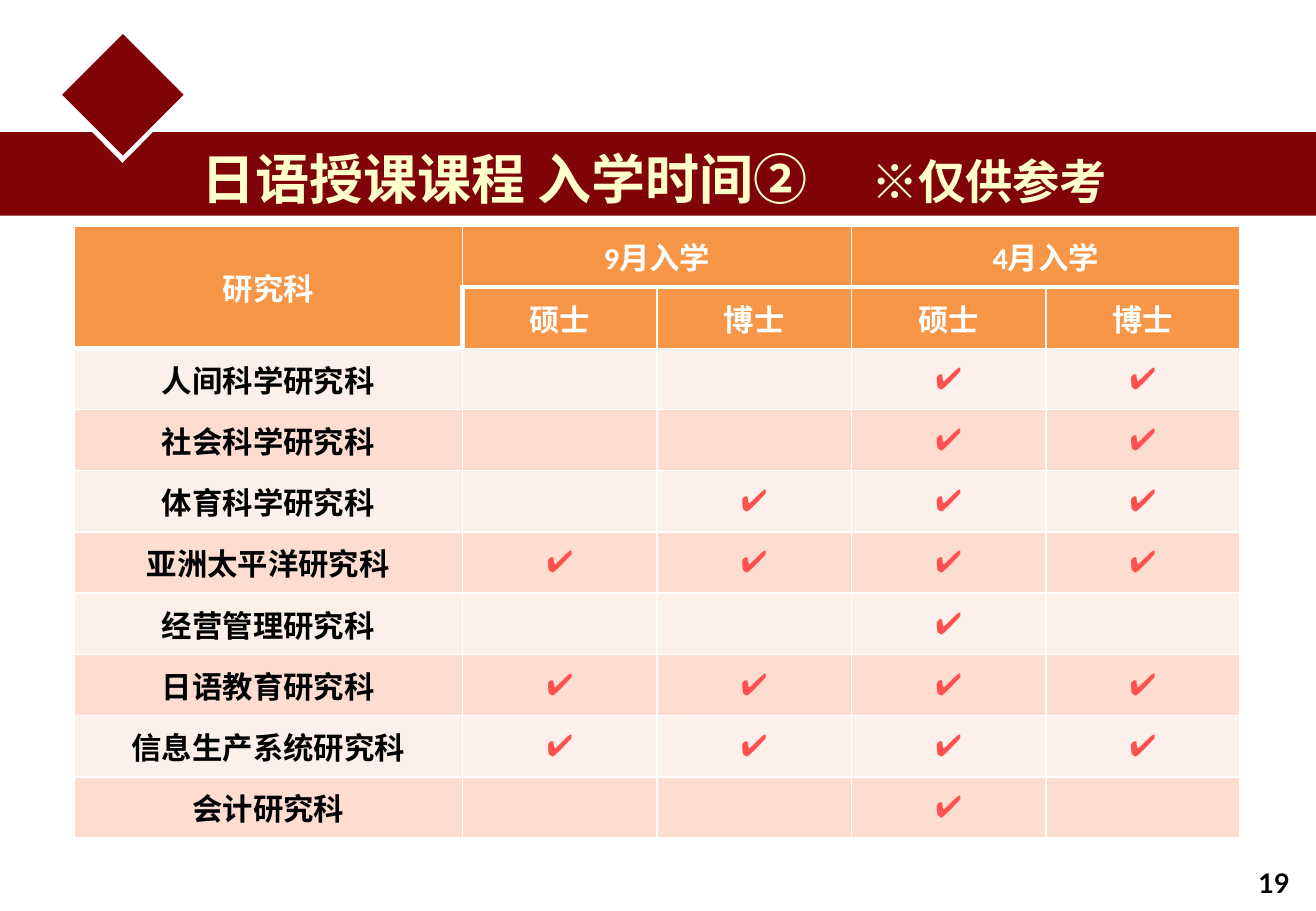
"""Build the slide of admission terms for the graduate schools."""
from dataclasses import dataclass

from lxml.etree import SubElement
from pptx import Presentation
from pptx.dml.color import RGBColor as RGB
from pptx.enum.shapes import MSO_SHAPE as SHAPE
from pptx.enum.text import MSO_ANCHOR as ANCHOR, PP_ALIGN as ALIGN
from pptx.oxml.ns import qn
from pptx.util import Emu, Pt

EMU_PER_PX = 3657.6
SCHOOLS = [
    ("人间科学研究科", "0011"),
    ("社会科学研究科", "0011"),
    ("体育科学研究科", "0111"),
    ("亚洲太平洋研究科", "1111"),
    ("经营管理研究科", "0010"),
    ("日语教育研究科", "1111"),
    ("信息生产系统研究科", "1111"),
    ("会计研究科", "0010"),
]


@dataclass(frozen=True)
class Theme:
    maroon: str = "800307"
    white: str = "FFFFFF"
    cream: str = "FFFFCC"
    black: str = "000000"
    header: str = "F79646"
    check: str = "FF5050"
    bands: tuple = ("FDEFE9", "FCDDCF")
    cjk: str = "Noto Sans CJK SC"
    body: str = "Roboto"
    digit: str = "Calibri"
    number: str = "Lato"
    title_size: int = 32
    note_size: int = 28
    table_size: int = 18
    number_size: int = 16


T = Theme()


def px(n):
    return Emu(round(n * EMU_PER_PX))


def style(p, name, size, color):
    p.font.name = name
    p.font.size = Pt(size)
    p.font.bold = True
    p.font.color.rgb = RGB.from_string(color)
    props = p._p.pPr.find(qn("a:defRPr"))
    SubElement(props, qn("a:ea")).set("typeface", T.cjk)


def add_runs(p, *texts):
    runs = [p.add_run() for _ in texts]
    for r, text in zip(runs, texts):
        r.text = text
    return runs


def add_block(shapes, kind, box, color):
    sp = shapes.add_shape(kind, *map(px, box))
    sp.shadow.inherit = False
    sp.fill.solid()
    sp.fill.fore_color.rgb = RGB.from_string(color)
    sp.line.fill.background()
    return sp


def add_text(s, box, wrap):
    tf = s.shapes.add_textbox(*map(px, box)).text_frame
    tf.word_wrap = wrap
    return tf.paragraphs[0]


def add_title(s):
    p = add_text(s, (390, 288, 2145, 160), True)
    tabs = SubElement(p._p.get_or_add_pPr(), qn("a:tabLst"))
    SubElement(tabs, qn("a:tab"), pos=str(px(1378)), algn="l")
    style(p, T.cjk, T.title_size, T.cream)
    note = add_runs(p, "日语授课课程 入学时间②\t", "※仅供参考")[1]
    note.font.size = Pt(T.note_size)


def border_widths(row, col):
    heavy_top = (row == 1 and col > 0) or (row, col) == (2, 0)
    heavy_bottom = row == 0 or (row, col) == (1, 0)
    return {
        "lnL": 3 if (row, col) == (1, 1) else 1,
        "lnR": 3 if (row, col) == (1, 0) else 1,
        "lnT": 3 if heavy_top else 1,
        "lnB": 3 if heavy_bottom else 1,
    }


def paint_cell(cell, row, col):
    tc_pr = cell._tc.get_or_add_tcPr()
    for side, width in border_widths(row, col).items():
        ln = SubElement(tc_pr, qn(f"a:{side}"), w=str(Pt(width)))
        fill = SubElement(ln, qn("a:solidFill"))
        SubElement(fill, qn("a:srgbClr"), val=T.white)
    cell.fill.solid()
    color = T.header if row < 2 else T.bands[row % 2]
    cell.fill.fore_color.rgb = RGB.from_string(color)
    cell.vertical_anchor = ANCHOR.MIDDLE
    cell.margin_left = cell.margin_right = px(28)


def fill_cell(cell, color, *texts):
    p = cell.text_frame.paragraphs[0]
    p.alignment = ALIGN.CENTER
    style(p, T.body, T.table_size, color)
    return add_runs(p, *texts)


def add_terms_table(s):
    widths = [800] + [400] * 4
    rows = len(SCHOOLS) + 2
    frame = s.shapes.add_table(rows, len(widths), px(152), px(465), px(sum(widths)), px(126 * rows))
    table = frame.table
    for column, width in zip(table.columns, widths):
        column.width = px(width)
    for row in range(rows):
        table.rows[row].height = px(126)
        for col in range(len(widths)):
            paint_cell(table.cell(row, col), row, col)

    table.cell(0, 0).merge(table.cell(1, 0))
    fill_cell(table.cell(0, 0), T.white, "研究科")
    for col, month in ((1, "9"), (3, "4")):
        table.cell(0, col).merge(table.cell(0, col + 1))
        digit = fill_cell(table.cell(0, col), T.white, month, "月入学")[0]
        digit.font.name = T.digit
        fill_cell(table.cell(1, col), T.white, "硕士")
        fill_cell(table.cell(1, col + 1), T.white, "博士")

    for row, (school, terms) in enumerate(SCHOOLS, 2):
        fill_cell(table.cell(row, 0), T.black, school)
        for col, is_open in enumerate(terms, 1):
            if is_open == "1":
                fill_cell(table.cell(row, col), T.check, "✔")


def main():
    prs = Presentation()
    prs.slide_width, prs.slide_height = px(2708), px(1875)
    s = prs.slides.add_slide(prs.slide_layouts[6])

    number = add_text(s, (2565, 1772, 145, 92), False)
    style(number, T.number, T.number_size, T.black)
    add_runs(number, "19")

    add_block(s.shapes, SHAPE.RECTANGLE, (0, 272, 2712, 172), T.maroon)
    emblem = s.shapes.add_group_shape().shapes
    notch = add_block(emblem, SHAPE.ISOSCELES_TRIANGLE, (188, 270, 128, 65), T.white)
    notch.rotation = 180
    add_block(emblem, SHAPE.DIAMOND, (128, 70, 250, 250), T.maroon)
    add_title(s)
    add_terms_table(s)
    prs.save("out.pptx")


if __name__ == "__main__":
    main()
